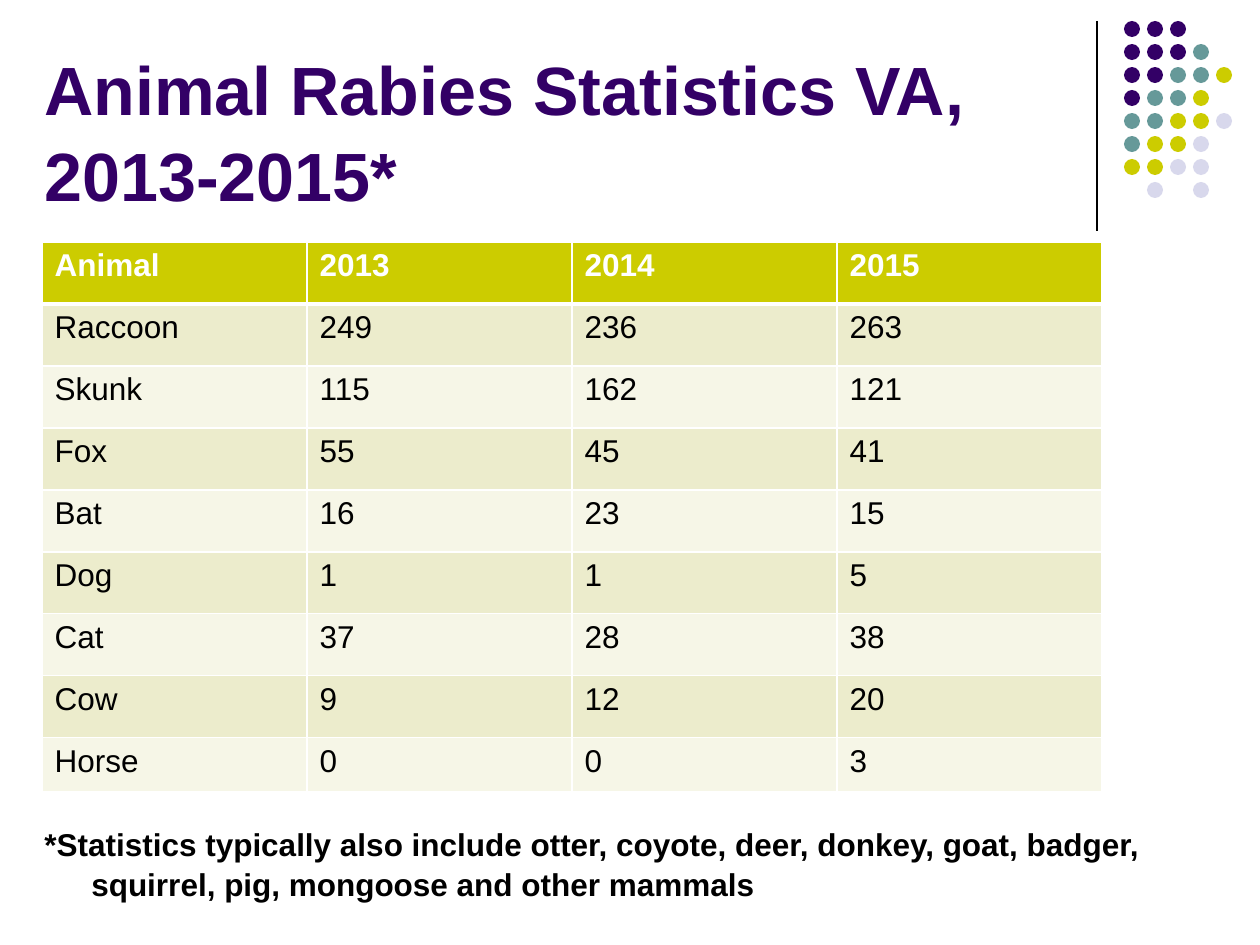
from dataclasses import dataclass
from typing import Any

from lxml import etree
from pptx import Presentation, util as u
from pptx.dml.color import RGBColor
from pptx.enum import shapes, text
from pptx.oxml import ns

PX_PER_INCH = 126


def px(count: int) -> u.Emu:
    return u.Emu(round(count * 914400 / PX_PER_INCH))


@dataclass(frozen=True)
class Theme:
    font: str = "Arial"
    title_size: int = 39
    body_size: int = 18
    purple: str = "330066"
    teal: str = "669999"
    lime: str = "CCCC00"
    lavender: str = "D8D8EC"
    black: str = "000000"
    white: str = "FFFFFF"
    bands: tuple[str, str] = ("ECECCC", "F6F6E7")


@dataclass(frozen=True)
class Box:
    left: int
    top: int
    width: int
    height: int

    def emu(self) -> tuple[u.Emu, ...]:
        return tuple(px(n) for n in (self.left, self.top, self.width, self.height))


@dataclass(frozen=True)
class TextBlock:
    words: str
    box: Box
    size: int
    color: str
    frame: dict[str, Any]
    hanging: int = 0


THEME = Theme()
DOT_COLORS = {"P": THEME.purple, "T": THEME.teal, "L": THEME.lime, "V": THEME.lavender}
DOT_ROWS = ("PPP", "PPPT", "PPTTL", "PTTL", "TTLLV", "TLLV", "LLVV", " V V")
DOT_LEFT, DOT_TOP, DOT_STEP, DOT_SIZE = 1124, 21, 23, 16

TABLE_BOX = Box(42, 242, 1060, 550)
ROW_HEIGHT, LAST_ROW_HEIGHT = 62, 54
RABIES_CASES = (
    ("Animal", "2013", "2014", "2015"),
    ("Raccoon", "249", "236", "263"),
    ("Skunk", "115", "162", "121"),
    ("Fox", "55", "45", "41"),
    ("Bat", "16", "23", "15"),
    ("Dog", "1", "1", "5"),
    ("Cat", "37", "28", "38"),
    ("Cow", "9", "12", "20"),
    ("Horse", "0", "0", "3"),
)

TEXT_BLOCKS = (
    TextBlock(
        "Animal Rabies Statistics VA, 2013-2015*",
        Box(32, 32, 1112, 189), THEME.title_size, THEME.purple,
        {"vertical_anchor": text.MSO_ANCHOR.BOTTOM},
    ),
    TextBlock(
        "*Statistics typically also include otter, coyote, deer, donkey, goat, "
        "badger, squirrel, pig, mongoose and other mammals",
        Box(32, 756, 1197, 147), THEME.body_size, THEME.black,
        {"vertical_anchor": text.MSO_ANCHOR.TOP, "margin_top": px(67)},
        hanging=47,
    ),
)


def write(para, words: str, size: int, color: str, bold: bool) -> None:
    span = para.add_run()
    span.text = words
    for name, value in {"name": THEME.font, "size": u.Pt(size), "bold": bold}.items():
        setattr(span.font, name, value)
    span.font.color.rgb = RGBColor.from_string(color)


def add_text(page, block: TextBlock) -> None:
    frame = page.shapes.add_textbox(*block.box.emu()).text_frame
    for name, value in {"word_wrap": True, **block.frame}.items():
        setattr(frame, name, value)
    para = frame.paragraphs[0]
    para.line_spacing = 1.05
    if block.hanging:
        properties = para._p.get_or_add_pPr()
        properties.set("marL", str(px(block.hanging)))
        properties.set("indent", str(-px(block.hanging)))
    write(para, block.words, block.size, block.color, bold=True)


def add_divider(page) -> None:
    divider = page.shapes.add_connector(
        shapes.MSO_CONNECTOR.STRAIGHT, px(1097), px(21), px(1097), px(231)
    )
    divider.line.width = u.Pt(0.75)
    divider.line.color.rgb = RGBColor.from_string(THEME.black)
    etree.SubElement(divider._element.spPr, ns.qn("a:effectLst"))


def add_dots(page) -> None:
    group = page.shapes.add_group_shape()
    for row, pattern in enumerate(DOT_ROWS):
        for column, key in enumerate(pattern):
            if key not in DOT_COLORS:
                continue
            box = Box(DOT_LEFT + column * DOT_STEP, DOT_TOP + row * DOT_STEP, DOT_SIZE, DOT_SIZE)
            dot = group.shapes.add_shape(shapes.MSO_SHAPE.OVAL, *box.emu())
            dot.shadow.inherit = False
            dot.fill.solid()
            dot.fill.fore_color.rgb = RGBColor.from_string(DOT_COLORS[key])
            dot.line.fill.background()


def add_borders(cell, widths: dict[str, int]) -> None:
    properties = cell._tc.get_or_add_tcPr()
    for side, width in widths.items():
        line = etree.SubElement(properties, ns.qn(f"a:ln{side}"), w=str(u.Pt(width)))
        fill = etree.SubElement(line, ns.qn("a:solidFill"))
        etree.SubElement(fill, ns.qn("a:srgbClr"), val=THEME.white)


def add_cases_table(page) -> None:
    row_count, column_count = len(RABIES_CASES), len(RABIES_CASES[0])
    table = page.shapes.add_table(row_count, column_count, *TABLE_BOX.emu()).table
    for column in table.columns:
        column.width = px(TABLE_BOX.width // column_count)
    for r, values in enumerate(RABIES_CASES):
        header = r == 0
        table.rows[r].height = px(LAST_ROW_HEIGHT if r == row_count - 1 else ROW_HEIGHT)
        fill = THEME.lime if header else THEME.bands[(r - 1) % 2]
        color = THEME.white if header else THEME.black
        widths = {"L": 1, "R": 1, "T": 3 if r == 1 else 1, "B": 3 if header else 1}
        for c, value in enumerate(values):
            cell = table.cell(r, c)
            add_borders(cell, widths)
            cell.fill.solid()
            cell.fill.fore_color.rgb = RGBColor.from_string(fill)
            write(cell.text_frame.paragraphs[0], value, THEME.body_size, color, header)


def main() -> None:
    deck = Presentation()
    deck.slide_width, deck.slide_height = px(1260), px(945)
    page = deck.slides.add_slide(deck.slide_layouts[6])
    add_divider(page)
    add_dots(page)
    for block in TEXT_BLOCKS:
        add_text(page, block)
    add_cases_table(page)
    deck.save("out.pptx")


if __name__ == "__main__":
    main()
